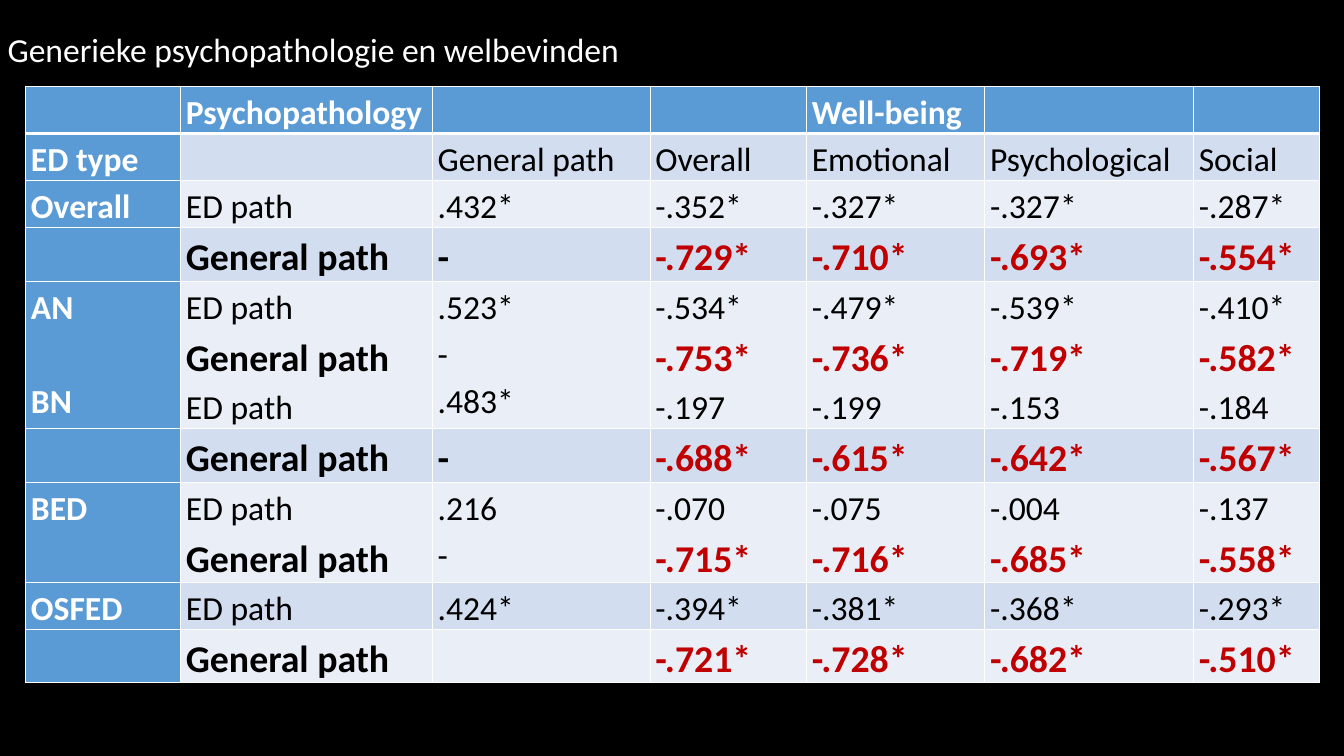
import pptx
import pptx.util
import pptx.dml.color
import pptx.enum.text
import pptx.oxml
import pptx.oxml.ns

TITLE = "Generieke psychopathologie en welbevinden"
ROWS = [
    ["", "Psychopathology", "", "", "Well-being", "", ""],
    ["ED type", "", "General path", "Overall", "Emotional", "Psychological", "Social"],
    ["Overall", "ED path", ".432*", "-.352*", "-.327*", "-.327*", "-.287*"],
    ["", "General path", "-", "-.729*", "-.710*", "-.693*", "-.554*"],
    ["AN\nBN", "ED path\nGeneral path\nED path", ".523*\n-\n.483*", "-.534*\n-.753*\n-.197",
     "-.479*\n-.736*\n-.199", "-.539*\n-.719*\n-.153", "-.410*\n-.582*\n-.184"],
    ["", "General path", "-", "-.688*", "-.615*", "-.642*", "-.567*"],
    ["BED", "ED path\nGeneral path", ".216\n-", "-.070\n-.715*", "-.075\n-.716*",
     "-.004\n-.685*", "-.137\n-.558*"],
    ["OSFED", "ED path", ".424*", "-.394*", "-.381*", "-.368*", "-.293*"],
    ["", "General path", "", "-.721*", "-.728*", "-.682*", "-.510*"],
]
COLUMN_WIDTHS = [2.05, 3.33, 2.88, 2.07, 2.36, 2.76, 1.66]
ROW_HEIGHTS = [0.59, 0.59, 0.59, 0.66, 1.85, 0.66, 1.25, 0.59, 0.66]
WHITE, BLACK, RED, BLUE = "FFFFFF", "000000", "C00000", "5B9BD5"
BANDS = ["EAEFF7", "D2DEEF"]
PATH_COLUMN = 2
GROUP_GAP = 45


def color(value):
    return pptx.dml.color.RGBColor.from_string(value)


def style(para, size, ink, bold=False):
    para.font.name = "Calibri"
    para.font.size = pptx.util.Pt(size)
    para.font.bold = bold
    para.font.color.rgb = color(ink)


def add_borders(cell, row):
    properties = cell._tc.get_or_add_tcPr()
    heavy_side = {0: "B", 1: "T"}.get(row)
    for side in "LRTB":
        width = pptx.util.Pt(3 if side == heavy_side else 1)
        properties.append(pptx.oxml.parse_xml(
            f'<a:ln{side} {pptx.oxml.ns.nsdecls("a")} w="{width}"><a:solidFill>'
            f'<a:srgbClr val="{WHITE}"/></a:solidFill></a:ln{side}>'))


def fill_cell(cell, row, column, labels):
    heading = row == 0 or column == 0
    add_borders(cell, row)
    cell.fill.solid()
    cell.fill.fore_color.rgb = color(BLUE if heading else BANDS[row % 2])
    cell.margin_left = cell.margin_right = pptx.util.Inches(0.07)
    cell.margin_top = cell.margin_bottom = 0
    cell.text = ROWS[row][column]
    for index, para in enumerate(cell.text_frame.paragraphs):
        para.line_spacing = 1.15
        if heading:
            style(para, 32, WHITE, True)
            if index:
                para.space_before = pptx.util.Pt(GROUP_GAP)
        elif labels[index] == "General path" and (column != PATH_COLUMN or len(labels) == 1):
            style(para, 36, RED if column > PATH_COLUMN else BLACK, True)
        else:
            style(para, 32, BLACK)


def main():
    deck = pptx.Presentation()
    deck.slide_width = pptx.util.Inches(17.78)
    deck.slide_height = pptx.util.Inches(10)
    page = deck.slides.add_slide(deck.slide_layouts[5])
    page.background.fill.solid()
    page.background.fill.fore_color.rgb = color(BLACK)

    title = page.shapes.title
    title.left, title.top, title.width, title.height = map(
        pptx.util.Inches, (0, 0.33, 10, 0.81))
    title.text_frame.text = TITLE
    title.text_frame.vertical_anchor = pptx.enum.text.MSO_ANCHOR.TOP
    para = title.text_frame.paragraphs[0]
    para.alignment = pptx.enum.text.PP_ALIGN.LEFT
    style(para, 32, WHITE)

    table = page.shapes.add_table(
        len(ROWS), len(COLUMN_WIDTHS), pptx.util.Inches(0.34), pptx.util.Inches(1.14),
        pptx.util.Inches(sum(COLUMN_WIDTHS)), pptx.util.Inches(sum(ROW_HEIGHTS))).table
    for column, width in zip(table.columns, COLUMN_WIDTHS):
        column.width = pptx.util.Inches(width)
    for row, height in enumerate(ROW_HEIGHTS):
        table.rows[row].height = pptx.util.Inches(height)
        labels = ROWS[row][1].split("\n")
        for column in range(len(COLUMN_WIDTHS)):
            fill_cell(table.cell(row, column), row, column, labels)

    deck.save("out.pptx")


if __name__ == "__main__":
    main()
